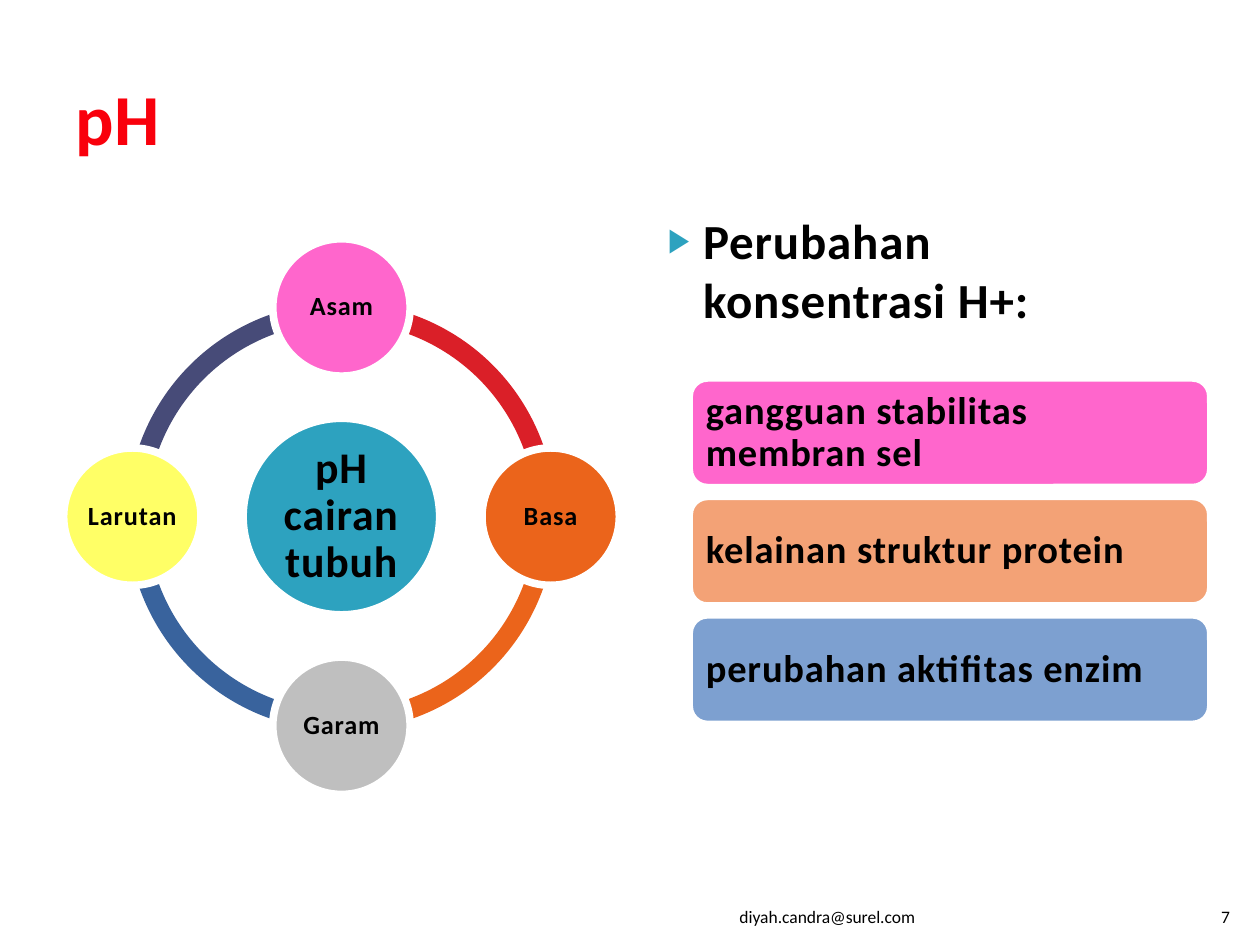
from lxml.etree import SubElement
from pptx import Presentation
from pptx.dml.color import RGBColor
from pptx.enum.shapes import MSO_SHAPE
from pptx.enum.text import MSO_ANCHOR, MSO_AUTO_SIZE, PP_ALIGN
from pptx.oxml.ns import qn
from pptx.util import Inches, Pt

FONT = "Calibri"
BLACK = RGBColor(0x00, 0x00, 0x00)
WHITE = RGBColor(0xFF, 0xFF, 0xFF)
RED = RGBColor(0xF9, 0x00, 0x0C)
TEAL = RGBColor(0x2D, 0xA2, 0xBF)
PINK = RGBColor(0xFF, 0x66, 0xCC)
ORANGE = RGBColor(0xEB, 0x64, 0x1B)
GREY = RGBColor(0xBF, 0xBF, 0xBF)
YELLOW = RGBColor(0xFF, 0xFF, 0x66)
PEACH = RGBColor(0xF3, 0xA2, 0x76)
LIGHT_BLUE = RGBColor(0x7D, 0xA0, 0xD0)
CRIMSON = RGBColor(0xDA, 0x1F, 0x28)
BLUE = RGBColor(0x39, 0x63, 0x9D)
INDIGO = RGBColor(0x47, 0x4B, 0x78)

CENTER_X, CENTER_Y = 2.71, 4.1
ORBIT = 1.66
RING_SIZE, HUB_SIZE, NODE_SIZE = 3.4, 1.56, 1.09
BAR_LEFT, BAR_TOP, BAR_WIDTH, BAR_HEIGHT, BAR_PITCH = 5.47, 3, 4.14, 0.87, 0.94

# label, node colour, direction from the hub, colour and start angle of the next arc
NODES = [
    ("Asam", PINK, (0, -1), CRIMSON, 270),
    ("Basa", ORANGE, (1, 0), ORANGE, 0),
    ("Garam", GREY, (0, 1), BLUE, 90),
    ("Larutan", YELLOW, (-1, 0), INDIGO, 180),
]
EFFECTS = [
    ("gangguan stabilitas membran sel", PINK),
    ("kelainan struktur protein", PEACH),
    ("perubahan aktifitas enzim", LIGHT_BLUE),
]


def write(shape, text, size, color=BLACK, bold=True, align=PP_ALIGN.LEFT,
          anchor=MSO_ANCHOR.MIDDLE, inset=None, line_spacing=None, bullet=None):
    frame = shape.text_frame
    frame.word_wrap = True
    frame.auto_size = MSO_AUTO_SIZE.NONE
    frame.vertical_anchor = anchor
    if inset is not None:
        frame.margin_left = frame.margin_right = Inches(inset)
        frame.margin_top = frame.margin_bottom = Inches(inset)
    paragraph = frame.paragraphs[0]
    if bullet:
        add_bullet(paragraph, bullet)
    paragraph.alignment = align
    paragraph.space_before = Pt(0)
    if line_spacing:
        paragraph.line_spacing = line_spacing
    run = paragraph.add_run()
    run.text = text
    run.font.name = FONT
    run.font.size = Pt(size)
    run.font.bold = bold
    run.font.color.rgb = color
    if bold:
        run.font._element.set("spc", "50")


def add_bullet(paragraph, character):
    properties = paragraph._p.get_or_add_pPr()
    properties.set("marL", str(Inches(0.4)))
    properties.set("indent", str(Inches(-0.28)))
    color = SubElement(properties, qn("a:buClr"))
    SubElement(color, qn("a:srgbClr"), val=str(TEAL))
    SubElement(properties, qn("a:buSzPct"), val="68000")
    SubElement(properties, qn("a:buChar"), char=character)


def place(shape, left, top, width, height):
    shape.left, shape.top = Inches(left), Inches(top)
    shape.width, shape.height = Inches(width), Inches(height)


def add_filled(slide, kind, left, top, width, height, fill, outlined=True):
    shape = slide.shapes.add_shape(
        kind, Inches(left), Inches(top), Inches(width), Inches(height))
    shape.shadow.inherit = False
    shape.fill.solid()
    shape.fill.fore_color.rgb = fill
    if outlined:
        shape.line.color.rgb = WHITE
        shape.line.width = Pt(4.33)
    else:
        shape.line.fill.background()
    return shape


def add_centered(slide, kind, x, y, size, fill, outlined=True):
    return add_filled(slide, kind, x - size / 2, y - size / 2, size, size, fill, outlined)


def add_arc(slide, start, fill):
    """Add a quarter of the ring, clockwise from start in degrees."""
    arc = add_centered(slide, MSO_SHAPE.BLOCK_ARC, CENTER_X, CENTER_Y, RING_SIZE, fill, False)
    # Angles are stored in 60000ths of a degree and adjustments in 100000ths.
    arc.adjustments[0] = start * 0.6
    arc.adjustments[1] = (start + 90) % 360 * 0.6
    arc.adjustments[2] = 0.046


def add_disc(slide, label, x, y, size, fill, font_size, inset):
    disc = add_centered(slide, MSO_SHAPE.OVAL, x, y, size, fill)
    write(disc, label, font_size, align=PP_ALIGN.CENTER, inset=inset, line_spacing=0.9)


def add_cycle(slide):
    for _, _, _, arc_color, start in reversed(NODES):
        add_arc(slide, start, arc_color)
    add_disc(slide, "pH cairan tubuh", CENTER_X, CENTER_Y, HUB_SIZE, TEAL, 25, 0.03)
    for label, fill, (across, down), _, _ in NODES:
        add_disc(slide, label, CENTER_X + across * ORBIT, CENTER_Y + down * ORBIT,
                 NODE_SIZE, fill, 15, 0.02)


def add_effects(slide):
    for row, (label, fill) in enumerate(EFFECTS):
        bar = add_filled(slide, MSO_SHAPE.ROUNDED_RECTANGLE, BAR_LEFT,
                         BAR_TOP + row * BAR_PITCH, BAR_WIDTH, BAR_HEIGHT, fill)
        write(bar, label, 22, inset=0.09, line_spacing=0.9)


def add_footer(slide, text, left, width):
    box = slide.shapes.add_textbox(Inches(left), Inches(7.01), Inches(width), Inches(0.4))
    write(box, text, 10, bold=False, align=PP_ALIGN.RIGHT, anchor=MSO_ANCHOR.BOTTOM)


def main():
    presentation = Presentation()
    presentation.slide_width, presentation.slide_height = Inches(10), Inches(7.5)
    slide = presentation.slides.add_slide(presentation.slide_layouts[1])
    title, body = slide.placeholders
    place(title, 0.5, 0.3, 9, 1.25)
    write(title, "pH", 41, color=RED)
    place(body, 5.08, 1.62, 4.42, 4.95)
    write(body, "Perubahan konsentrasi H+:", 28, anchor=MSO_ANCHOR.TOP, bullet="▶")
    add_cycle(slide)
    add_effects(slide)
    add_footer(slide, "diyah.candra@surel.com", 4.79, 2.57)
    add_footer(slide, "7", 9.46, 0.4)
    presentation.save("out.pptx")


if __name__ == "__main__":
    main()
